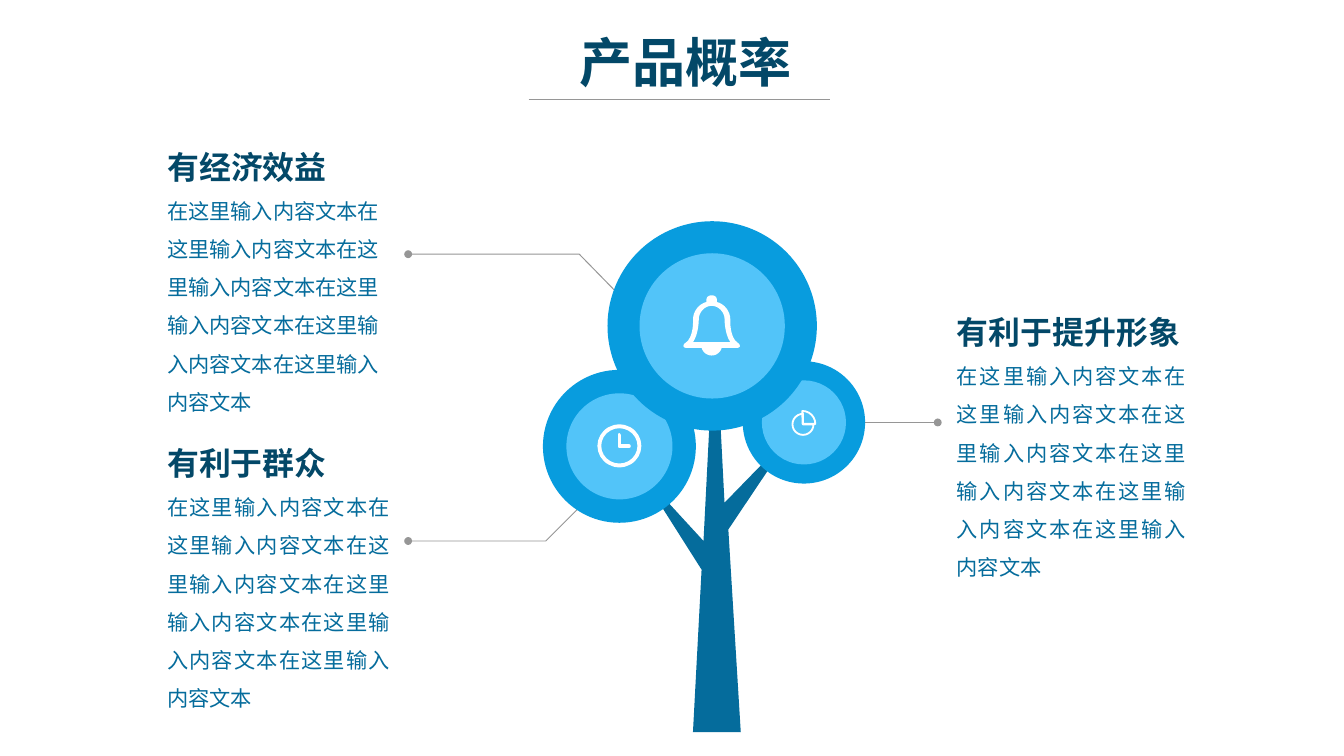
import pptx
import pptx.dml.color
import pptx.enum.shapes
import pptx.enum.text
import pptx.oxml.ns
import pptx.util
from lxml import etree
from pptx.util import Inches

FONT = "Noto Sans CJK SC"
COLORS = {
    "heading": "034868",
    "body": "056C9C",
    "trunk": "056C9C",
    "crown": "089CDE",
    "core": "52C4F9",
    "line": "969696",
    "icon": "FFFFFF",
}
BODY = "在这里输入内容文本" * 6
SHAPES = pptx.enum.shapes.MSO_SHAPE
ALIGN = pptx.enum.text.PP_ALIGN

# Bell outline, right half: single points are lines, triples are curves
BELL_AXIS = 7.445
BELL_OUTER = [
    [(BELL_AXIS, 3.09)],
    [(7.48, 3.09), (7.5, 3.11), (7.5, 3.14)],
    [(7.5, 3.16)],
    [(7.58, 3.18), (7.64, 3.26), (7.64, 3.34)],
    [(7.64, 3.35), (7.63, 3.53), (7.72, 3.59)],
    [(7.73, 3.59), (7.74, 3.61), (7.74, 3.62)],
    [(7.74, 3.63), (7.73, 3.64), (7.71, 3.64)],
    [(7.55, 3.64)],
    [(7.54, 3.68), (7.5, 3.72), (BELL_AXIS, 3.72)],
]
BELL_INNER = [
    [(BELL_AXIS, 3.2)],
    [(7.52, 3.2), (7.58, 3.27), (7.58, 3.34)],
    [(7.58, 3.35), (7.58, 3.49), (7.64, 3.58)],
]


def rgb(name):
    return pptx.dml.color.RGBColor.from_string(COLORS[name])


def add_child(parent, tag, **attributes):
    return etree.SubElement(parent, pptx.oxml.ns.qn(tag), attributes)


def line_element(shape):
    return shape.element.spPr.find(pptx.oxml.ns.qn("a:ln"))


def paint(shape, fill=None, line=None, weight=0.75):
    shape.shadow.inherit = False
    if fill:
        shape.fill.solid()
        shape.fill.fore_color.rgb = rgb(fill)
    else:
        shape.fill.background()
    if line:
        shape.line.color.rgb = rgb(line)
        shape.line.width = pptx.util.Pt(weight)
    else:
        shape.line.fill.background()
    return shape


def add_preset(page, kind, left, top, width, height, **look):
    shape = page.shapes.add_shape(
        kind, Inches(left), Inches(top), Inches(width), Inches(height))
    return paint(shape, **look)


def add_outline(page, *contours, close=True, **look):
    """Draw one freeform from one or more lists of points."""
    scaled = [[(Inches(x), Inches(y)) for x, y in points] for points in contours]
    builder = page.shapes.build_freeform(*scaled[0][0], scale=1.0)
    for index, points in enumerate(scaled):
        if index:
            builder.move_to(*points[0])
        builder.add_line_segments(points[1:], close=close)
    return paint(builder.convert_to_shape(), **look)


def add_rule(page, start, end):
    rule = page.shapes.add_connector(
        pptx.enum.shapes.MSO_CONNECTOR.STRAIGHT,
        *[Inches(value) for value in (*start, *end)])
    rule.line.color.rgb = rgb("line")
    rule.line.width = pptx.util.Pt(0.75)
    add_child(rule.element.spPr, "a:effectLst")
    return rule


def add_dot(shape):
    add_child(line_element(shape), "a:tailEnd", type="oval")


def add_box(page, left, top, width, height, wrap=True, inset=0):
    box = page.shapes.add_textbox(
        Inches(left), Inches(top), Inches(width), Inches(height))
    frame = box.text_frame
    frame.word_wrap = wrap
    frame.auto_size = pptx.enum.text.MSO_AUTO_SIZE.SHAPE_TO_FIT_TEXT
    frame.margin_left = frame.margin_right = Inches(inset)
    frame.margin_top = frame.margin_bottom = Inches(inset / 2)
    return frame


def write(para, text, size, color, bold=False, align=ALIGN.LEFT, spacing=1.0):
    para.alignment = align
    para.line_spacing = spacing
    span = para.add_run()
    span.text = text
    span.font.size = pptx.util.Pt(size)
    span.font.bold = bold
    span.font.color.rgb = rgb(color)
    span.font.name = FONT
    properties = span.font.fill and para.runs[-1]._r.get_or_add_rPr()
    add_child(properties, "a:ea", typeface=FONT)


def add_topic(page, heading, left, top, width, height, align=ALIGN.JUSTIFY):
    frame = add_box(page, left, top, width, height)
    write(frame.paragraphs[0], heading, 24, "heading", bold=True)
    write(frame.add_paragraph(), BODY, 16, "body", align=align, spacing=1.5)


def add_crown(page, center_x, center_y, outer, inner):
    for size, fill in ((outer, "crown"), (inner, "core")):
        add_preset(page, SHAPES.OVAL, center_x - size / 2, center_y - size / 2,
                   size, size, fill=fill)


def mirrored_outline(segments, axis, steps=8):
    """Flatten the curves of one half, then add its mirror image."""
    points = []
    for segment in segments:
        if len(segment) == 1:
            points.append(segment[0])
            continue
        corners = [points[-1], *segment]
        for step in range(1, steps + 1):
            t = step / steps
            weights = ((1 - t) ** 3, 3 * t * (1 - t) ** 2, 3 * t * t * (1 - t), t ** 3)
            points.append(tuple(
                sum(weight * corner[i] for weight, corner in zip(weights, corners))
                for i in (0, 1)))
    return points + [(2 * axis - x, y) for x, y in reversed(points)]


def add_icons(page):
    # Pie chart: three quarters and the detached quarter
    add_preset(page, SHAPES.PIE, 8.29, 4.33, 0.22, 0.22, line="icon", weight=1.4)
    quarter = add_preset(page, SHAPES.PIE, 8.26, 4.3, 0.27, 0.27,
                         line="icon", weight=1.4)
    quarter.adjustments[0], quarter.adjustments[1] = 162, 0
    # Bell
    add_outline(page, mirrored_outline(BELL_OUTER, BELL_AXIS),
                mirrored_outline(BELL_INNER, BELL_AXIS), fill="icon")
    # Clock: rim and hands
    rim = add_preset(page, SHAPES.DONUT, 6.25, 4.44, 0.46, 0.45, fill="icon")
    rim.adjustments[0] = 0.09
    hands = add_outline(page, [(6.48, 4.55), (6.48, 4.67), (6.58, 4.67)],
                        close=False, line="icon", weight=2.8)
    line_element(hands).set("cap", "rnd")
    add_child(line_element(hands), "a:round")


def main():
    deck = pptx.Presentation()
    deck.slide_width, deck.slide_height = Inches(14.06), Inches(7.91)
    page = deck.slides.add_slide(deck.slide_layouts[6])

    # Title
    title = add_box(page, 5.93, 0.26, 2.45, 0.77, wrap=False, inset=0.1)
    write(title.paragraphs[0], "产品概率", 40, "heading", bold=True, align=ALIGN.RIGHT)
    add_rule(page, (5.53, 1.04), (8.68, 1.04))

    # Topics
    add_topic(page, "有利于群众", 1.75, 4.64, 2.33, 2.83)
    add_topic(page, "有经济效益", 1.75, 1.54, 2.39, 3.1, align=ALIGN.LEFT)
    add_topic(page, "有利于提升形象", 10.01, 3.27, 2.4, 2.83)

    # Leader lines
    for points in ([(6.48, 3.09), (6.06, 2.66), (4.27, 2.66)],
                   [(6.1, 5.27), (5.71, 5.66), (4.27, 5.66)]):
        add_dot(add_outline(page, points, close=False, line="line"))
    add_dot(add_rule(page, (8.97, 4.42), (9.81, 4.42)))

    # Tree
    add_outline(page, [(7.25, 7.66), (7.75, 7.66), (7.62, 5.54), (8.31, 4.51),
                       (7.58, 5.26), (7.48, 3.31), (7.36, 5.66), (6.68, 4.92),
                       (7.34, 5.96)], fill="trunk")
    add_crown(page, 8.41, 4.42, 1.28, 0.88)
    add_crown(page, 6.48, 4.67, 1.6, 1.11)
    add_crown(page, 7.45, 3.41, 2.19, 1.52)
    add_icons(page)

    deck.save("out.pptx")


if __name__ == "__main__":
    main()
